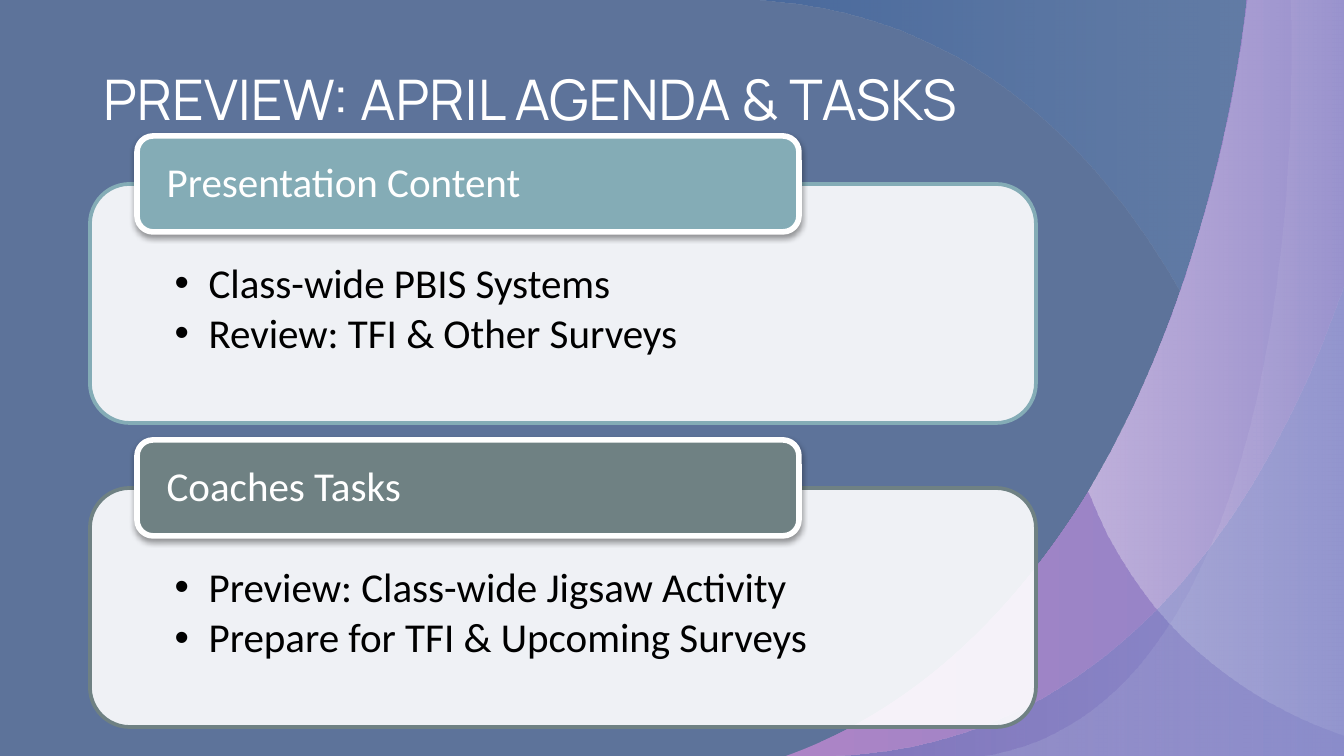
from lxml.etree import SubElement
from pptx import Presentation
from pptx.dml.color import RGBColor
from pptx.enum.shapes import MSO_SHAPE as SHAPE
from pptx.enum.text import MSO_ANCHOR as ANCHOR
from pptx.oxml.ns import qn
from pptx.util import Pt

EMU_PER_PX = 914400 / 134.4


def px(*lengths):
    """Turn px lengths into a list of EMU values."""
    return [round(length * EMU_PER_PX) for length in lengths]


def paint(color, value, alpha=100):
    """Set a colour from a hex string, with opacity in percent."""
    color.rgb = RGBColor.from_string(value)
    if alpha < 100:
        element = color._xFill.find(qn("a:srgbClr"))
        SubElement(element, qn("a:alpha"), val=str(alpha * 1000))


presentation = Presentation()
presentation.slide_width, presentation.slide_height = px(1344, 756)
slide = presentation.slides.add_slide(presentation.slide_layouts[6])
slide.background.fill.solid()
paint(slide.background.fill.fore_color, "5D739A")

# Waves: right edge, start, cubic curves, then left and right (colour, opacity)
blue_glass = [("114CA0", 29), ("8AAFDC", 18)]
waves = [
    (1352, (1327, 756), [(1327, 756, 1251, 0, 728, 0)], blue_glass),
    (1434, (1247, 0), [(1247, 0, 1223, 267, 1089, 491), (1020, 603, 923, 707, 786, 756)],
     [("AD84C6", 100), ("8784C7", 100)]),
    (1434, (1247, 0), [(1247, 0, 1223, 267, 1089, 491), (1184, 739, 1434, 756, 1434, 756)],
     [("FFFFFF", 36), ("FFFFFF", 0)]),
    (1434, (1290, 0), [(1290, 0, 1324, 706, 981, 756)], [("FFFFFF", 18), ("FFFFFF", 0)]),
    (1434, (1410, 0), [(1410, 0, 1335, 756, 812, 756)], blue_glass),
]
for right, start, curves, colors in waves:
    points = [curve[4:] for curve in curves]
    if points[-1][0] != right:
        points.append((right, points[-1][1]))
    points.append((right, start[1]))
    builder = slide.shapes.build_freeform(*px(*start))
    builder.add_line_segments([px(*point) for point in points], close=True)
    wave = builder.convert_to_shape()

    # Bend the first segments by giving each its two control points
    segments = list(wave._element.iter(qn("a:lnTo")))
    for segment, curve in zip(segments, curves):
        segment.tag = qn("a:cubicBezTo")
        for position, (x, y) in enumerate((curve[:2], curve[2:4])):
            x, y = px(x, y)
            control = SubElement(segment, qn("a:pt"), x=str(x - wave.left), y=str(y - wave.top))
            segment.insert(position, control)

    wave.shadow.inherit = False
    wave.line.fill.background()
    wave.fill.gradient()
    wave.fill.gradient_angle = 0
    for stop, position, (value, alpha) in zip(wave.fill.gradient_stops, (0, 1), colors):
        stop.position = position
        paint(stop.color, value, alpha)

title = slide.shapes.add_textbox(*px(90, 52, 1034, 93))
frame = title.text_frame
frame.word_wrap = True
frame.margin_left, frame.margin_top, frame.margin_right, frame.margin_bottom = px(13, 13, 13, 13)
frame.text = "PREVIEW: APRIL AGENDA & TASKS"
font = frame.paragraphs[0].runs[0].font
font.name, font.size = "Manrope", Pt(30)
paint(font.color, "FFFFFF")

cards = [
    ("Presentation Content", "84ACB6",
     ["Class-wide PBIS Systems", "Review: TFI & Other Surveys"]),
    ("Coaches Tasks", "6F8183",
     ["Preview: Class-wide Jigsaw Activity", "Prepare for TFI & Upcoming Surveys"]),
]
CARD_PITCH = 304
for index, (heading, accent, tasks) in enumerate(cards):
    top = 136 + index * CARD_PITCH
    body = slide.shapes.add_shape(SHAPE.ROUNDED_RECTANGLE, *px(90, top + 48, 946, 239))
    header = slide.shapes.add_shape(SHAPE.ROUNDED_RECTANGLE, *px(137, top, 662, 96))
    parts = [
        (body, "FFFFFF", 90, accent, 2, "\n".join(tasks), "000000", ANCHOR.TOP, (73, 67, 73, 22)),
        (header, accent, 100, "FFFFFF", 3, heading, "FFFFFF", ANCHOR.MIDDLE, (25, 1, 25, 0)),
    ]
    for shape, fill, alpha, outline, weight, text, ink, anchor, margins in parts:
        shape.shadow.inherit = False
        shape.fill.solid()
        paint(shape.fill.fore_color, fill, alpha)
        paint(shape.line.color, outline)
        shape.line.width = Pt(weight)
        frame = shape.text_frame
        frame.word_wrap = True
        frame.vertical_anchor = anchor
        (frame.margin_left, frame.margin_top,
         frame.margin_right, frame.margin_bottom) = px(*margins)
        frame.text = text
        for paragraph in frame.paragraphs:
            properties = paragraph._p.get_or_add_pPr()
            properties.set("algn", "l")
            if shape is body:
                indent = px(34)[0]
                properties.set("marL", str(indent))
                properties.set("indent", str(-indent))
                SubElement(properties, qn("a:buFont"), typeface="Arial")
                SubElement(properties, qn("a:buChar"), char="•")
            paragraph.line_spacing = 0.9
            paragraph.space_after = Pt(3.3)
            font = paragraph.runs[0].font
            font.name, font.size = "Calibri", Pt(22)
            paint(font.color, ink)

    effects = header._element.spPr.find(qn("a:effectLst"))
    shadow = SubElement(effects, qn("a:outerShdw"), blurRad=str(Pt(3.1)), dist=str(Pt(1.6)),
                        dir="5400000", rotWithShape="0")
    shadow_color = SubElement(shadow, qn("a:srgbClr"), val="000000")
    SubElement(shadow_color, qn("a:alpha"), val="38000")

presentation.save("out.pptx")
